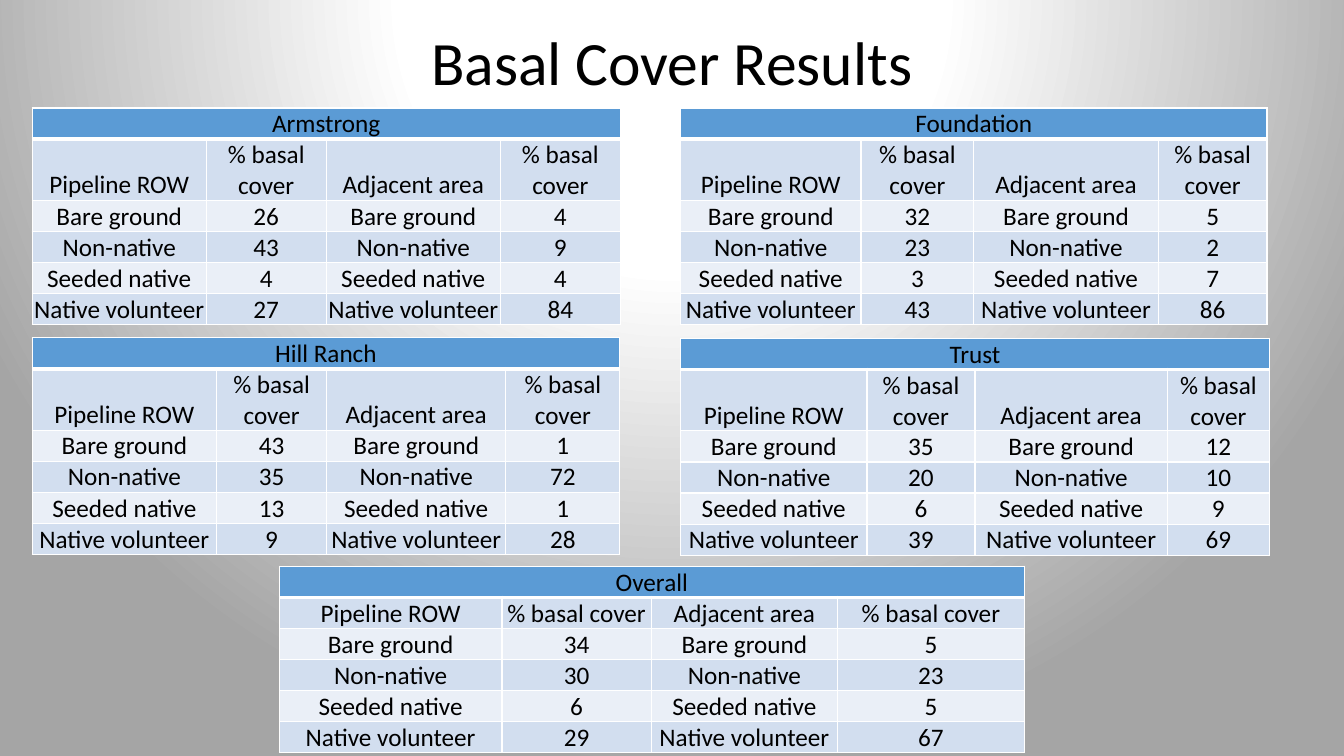
from dataclasses import dataclass

from pptx import Presentation
from pptx.dml.color import RGBColor
from pptx.enum.text import MSO_ANCHOR as Anchor, PP_ALIGN as Align
from pptx.oxml import parse_xml
from pptx.oxml.ns import nsdecls
from pptx.util import Cm, Pt


@dataclass(frozen=True)
class Theme:
    font: str = "Calibri"
    title_size: int = 44
    table_size: int = 18
    text: str = "000000"
    header: str = "5B9BD5"
    band_dark: str = "D2DEEF"
    band_light: str = "EAEFF7"
    border: str = "FFFFFF"
    thin: int = 1
    thick: int = 3
    gradient: tuple = ((0, "FFFFFF"), (35, "FFFFFF"), (100, "A5A5A5"))


THEME = Theme()
ROW_HEIGHT = 0.71
LEFT, RIGHT = 0.81, 17.15
HEADINGS = ("Pipeline ROW", "% basal cover", "Adjacent area", "% basal cover")
COVERS = ("Bare ground", "Non-native", "Seeded native", "Native volunteer")

# Site, (left, top) in cm, column widths in cm, ROW values, adjacent values
SITES = (
    ("Armstrong", (LEFT, 2.72), (4.39, 3.02, 4.39, 3.02),
     (26, 43, 4, 27), (4, 9, 4, 84)),
    ("Foundation", (RIGHT, 2.72), (4.55, 2.84, 4.65, 2.74),
     (32, 23, 3, 43), (5, 2, 7, 86)),
    ("Hill Ranch", (LEFT, 8.51), (4.65, 2.77, 4.52, 2.87),
     (43, 35, 13, 9), (1, 72, 1, 28)),
    ("Trust", (RIGHT, 8.53), (4.7, 2.72, 4.85, 2.57),
     (35, 20, 6, 39), (12, 10, 9, 69)),
    ("Overall", (7.04, 14.27), (5.61, 3.76, 4.7, 4.7),
     (34, 30, 6, 29), (5, 23, 5, 67)),
)


def paint_background(page):
    """Fill the page with a round gradient centred above its top edge."""
    stops = "".join(
        f'<a:gs pos="{place * 1000}"><a:srgbClr val="{color}"/></a:gs>'
        for place, color in THEME.gradient)
    page.element.cSld.insert(0, parse_xml(
        f'<p:bg {nsdecls("p", "a")}><p:bgPr><a:gradFill rotWithShape="1">'
        f'<a:gsLst>{stops}</a:gsLst><a:path path="circle">'
        '<a:fillToRect l="50000" t="-80000" r="50000" b="180000"/></a:path>'
        '</a:gradFill><a:effectLst/></p:bgPr></p:bg>'))


def write(frame, text, size):
    para = frame.paragraphs[0]
    para.alignment = Align.CENTER
    span = para.add_run()
    span.text = text
    span.font.name = THEME.font
    span.font.size = Pt(size)
    span.font.color.rgb = RGBColor.from_string(THEME.text)
    return para


def add_title(page, box, text):
    frame = page.shapes.add_textbox(*map(Cm, box)).text_frame
    frame.word_wrap = True
    frame.vertical_anchor = Anchor.MIDDLE
    write(frame, text, THEME.title_size).line_spacing = 0.9


def set_borders(cell, top, bottom):
    """Draw the four edges; top and bottom are widths in points."""
    edges = (("lnL", THEME.thin), ("lnR", THEME.thin), ("lnT", top), ("lnB", bottom))
    properties = cell._tc.get_or_add_tcPr()
    for index, (edge, width) in enumerate(edges):
        properties.insert(index, parse_xml(
            f'<a:{edge} {nsdecls("a")} w="{Pt(width)}"><a:solidFill>'
            f'<a:srgbClr val="{THEME.border}"/></a:solidFill></a:{edge}>'))


def style_cell(cell, row):
    cell.margin_left = cell.margin_right = cell.margin_top = Cm(0.02)
    cell.margin_bottom = 0
    cell.vertical_anchor = Anchor.BOTTOM
    band = THEME.band_dark if row % 2 else THEME.band_light
    cell.fill.solid()
    cell.fill.fore_color.rgb = RGBColor.from_string(band if row else THEME.header)
    set_borders(cell, top=THEME.thick if row == 1 else THEME.thin,
                bottom=THEME.thin if row else THEME.thick)


def add_site_table(page, site, corner, widths, pipeline, adjacent):
    body = [(cover, own, cover, near)
            for cover, own, near in zip(COVERS, pipeline, adjacent)]
    rows = [(site, "", "", ""), HEADINGS, *body]
    box = (*corner, sum(widths), ROW_HEIGHT * len(rows))
    table = page.shapes.add_table(len(rows), len(widths), *map(Cm, box)).table
    table.first_row = table.horz_banding = False
    for column, width in zip(table.columns, widths):
        column.width = Cm(width)
    table.cell(0, 0).merge(table.cell(0, len(widths) - 1))
    for row, values in enumerate(rows):
        for column, value in enumerate(values):
            cell = table.cell(row, column)
            style_cell(cell, row)
            if not cell.is_spanned:
                write(cell.text_frame, str(value), THEME.table_size)


def main():
    deck = Presentation()
    deck.slide_width, deck.slide_height = Cm(33.87), Cm(19.05)
    page = deck.slides.add_slide(deck.slide_layouts[6])
    paint_background(page)
    add_title(page, (2.33, -0.2, 29.21, 3.68), "Basal Cover Results")
    for site in SITES:
        add_site_table(page, *site)
    deck.save("out.pptx")


if __name__ == "__main__":
    main()
